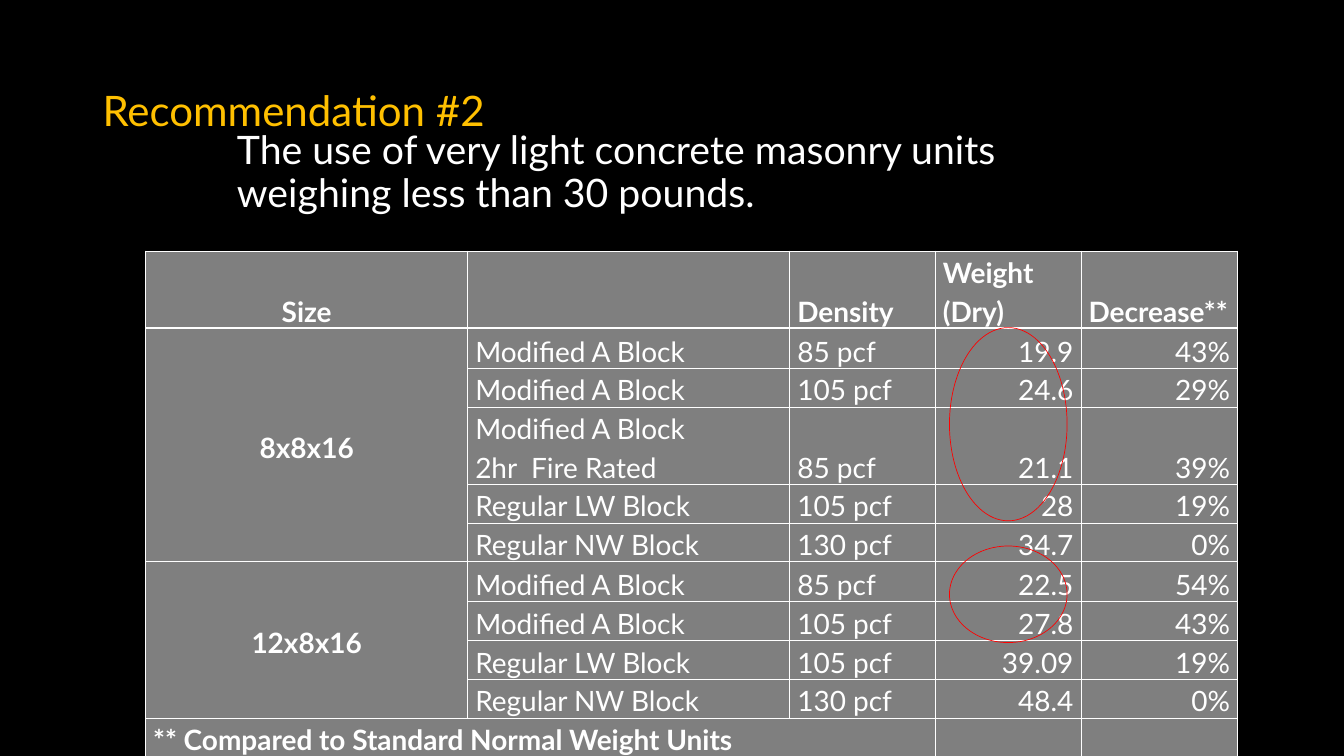
from dataclasses import dataclass

from lxml.etree import SubElement
from pptx import Presentation
from pptx.dml.color import RGBColor as Color
from pptx.enum.shapes import MSO_SHAPE as Shape
from pptx.enum.text import MSO_ANCHOR as Anchor, MSO_AUTO_SIZE as AutoSize, PP_ALIGN as Align
from pptx.oxml.ns import qn
from pptx.util import Pt


@dataclass(frozen=True)
class Theme:
    font: str = "Lato"
    background: str = "000000"
    accent: str = "FFC000"
    text: str = "FFFFFF"
    cell: str = "7F7F7F"
    mark: str = "FF0000"
    title_size: int = 60
    body_size: int = 56
    table_size: int = 40


HEADER = ["Size", "", "Density", "Weight (Dry)", "Decrease**"]
GROUPS = {
    "8x8x16": [
        ("Modified A Block", "85 pcf", "19.9", "43%"),
        ("Modified A Block", "105 pcf", "24.6", "29%"),
        ("Modified A Block\n2hr  Fire Rated", "85 pcf", "21.1", "39%"),
        ("Regular LW Block", "105 pcf", "28", "19%"),
        ("Regular NW Block", "130 pcf", "34.7", "0%"),
    ],
    "12x8x16": [
        ("Modified A Block", "85 pcf", "22.5", "54%"),
        ("Modified A Block", "105 pcf", "27.8", "43%"),
        ("Regular LW Block", "105 pcf", "39.09", "19%"),
        ("Regular NW Block", "130 pcf", "48.4", "0%"),
    ],
}
FOOTNOTE = "** Compared to Standard Normal Weight Units"

COLUMN_WIDTHS = [460, 460, 208, 208, 223.5]
SINGLE_ROW, GROUP_FIRST_ROW, DOUBLE_ROW = 55.4, 56.9, 110.2
COLUMN_ALIGN = [Align.CENTER, Align.LEFT, Align.LEFT, Align.RIGHT, Align.RIGHT]


class SlideBuilder:
    def __init__(self, page, theme):
        self.page = page
        self.theme = theme
        fill = page.background.fill
        fill.solid()
        fill.fore_color.rgb = Color.from_string(theme.background)

    def style(self, para, size, color, spacing, align=Align.LEFT, bold=False):
        para.alignment = align
        para.line_spacing = spacing
        font = para.font
        font.name, font.size, font.bold = self.theme.font, Pt(size), bold
        font.color.rgb = Color.from_string(color)

    def placeholder(self, box, text, place, size, color, anchor):
        box.left, box.top, box.width, box.height = map(Pt, place)
        frame = box.text_frame
        frame.text = text
        frame.word_wrap = True
        frame.auto_size = AutoSize.NONE
        frame.vertical_anchor = anchor
        frame.margin_left = frame.margin_right = Pt(14.4)
        frame.margin_top = frame.margin_bottom = Pt(7.2)
        self.style(frame.paragraphs[0], size, color, 0.9)
        return frame.paragraphs[0]

    def title(self, text, place):
        self.placeholder(self.page.shapes.title, text, place,
                         self.theme.title_size, self.theme.accent, Anchor.MIDDLE)

    def body(self, text, place):
        para = self.placeholder(self.page.placeholders[1], text, place,
                                self.theme.body_size, self.theme.text, Anchor.TOP)
        para.space_before = Pt(20)
        properties = para._p.get_or_add_pPr()
        properties.set("marL", "0")
        properties.set("indent", "0")
        bullet = SubElement(properties, qn("a:buNone"))
        properties.remove(bullet)
        properties.insert_element_before(bullet, "a:tabLst", "a:defRPr", "a:extLst")

    def borders(self, cell, bottom_width):
        properties = cell._tc.get_or_add_tcPr()
        for side, width in zip("LRTB", (1, 1, 1, bottom_width)):
            line = SubElement(properties, qn(f"a:ln{side}"), w=str(Pt(width)))
            fill = SubElement(line, qn("a:solidFill"))
            SubElement(fill, qn("a:srgbClr"), val=self.theme.text)

    def cell(self, cell, text, align, bold, anchor=Anchor.BOTTOM, bottom_width=1):
        self.borders(cell, bottom_width)
        cell.fill.solid()
        cell.fill.fore_color.rgb = Color.from_string(self.theme.cell)
        cell.margin_left = cell.margin_right = Pt(10.8)
        cell.margin_top = cell.margin_bottom = 0
        cell.vertical_anchor = anchor
        cell.text_frame.text = text
        for para in cell.text_frame.paragraphs:
            self.style(para, self.theme.table_size, self.theme.text, 1.15, align, bold)

    def table(self, left, top):
        rows, heights, group_spans = [HEADER], [DOUBLE_ROW], []
        for size, blocks in GROUPS.items():
            group_spans.append((len(rows), len(rows) + len(blocks) - 1))
            for index, block in enumerate(blocks):
                rows.append([size if index == 0 else "", *block])
                if "\n" in block[0]:
                    heights.append(DOUBLE_ROW)
                else:
                    heights.append(GROUP_FIRST_ROW if index == 0 else SINGLE_ROW)
        rows.append([FOOTNOTE, "", "", "", ""])
        heights.append(SINGLE_ROW)

        grid = self.page.shapes.add_table(
            len(rows), len(HEADER), Pt(left), Pt(top),
            Pt(sum(COLUMN_WIDTHS)), Pt(sum(heights))).table
        grid.first_row = grid.horz_banding = False
        for column, width in zip(grid.columns, COLUMN_WIDTHS):
            column.width = Pt(width)
        last = len(rows) - 1
        for r, (texts, height) in enumerate(zip(rows, heights)):
            grid.rows[r].height = Pt(height)
            for c, text in enumerate(texts):
                header, footer = r == 0, r == last
                plain_left = footer or (header and c > 0)
                self.cell(grid.cell(r, c), text,
                          Align.LEFT if plain_left else COLUMN_ALIGN[c],
                          bold=header or c == 0,
                          anchor=Anchor.MIDDLE if c == 0 and 0 < r < last else Anchor.BOTTOM,
                          bottom_width=3 if header else 1)
        for first, final in group_spans:
            grid.cell(first, 0).merge(grid.cell(final, 0))
        grid.cell(last, 0).merge(grid.cell(last, 2))

    def ring(self, left, top, width, height):
        ring = self.page.shapes.add_shape(Shape.OVAL, Pt(left), Pt(top), Pt(width), Pt(height))
        ring.shadow.inherit = False
        ring.fill.background()
        ring.line.color.rgb = Color.from_string(self.theme.mark)
        ring.line.width = Pt(1)


def main():
    deck = Presentation()
    deck.slide_width, deck.slide_height = Pt(1919.5), Pt(1080)
    builder = SlideBuilder(deck.slides.add_slide(deck.slide_layouts[1]), Theme())
    builder.title("Recommendation #2", (132, 57.5, 1655.5, 209))
    builder.body("The use of very light concrete masonry units weighing less than 30 pounds.",
                 (324, 180, 1296, 156))
    builder.table(208, 358.5)
    for top, height in ((468, 276), (780, 138)):
        builder.ring(1356, top, 168, height)
    deck.save("out.pptx")


if __name__ == "__main__":
    main()
